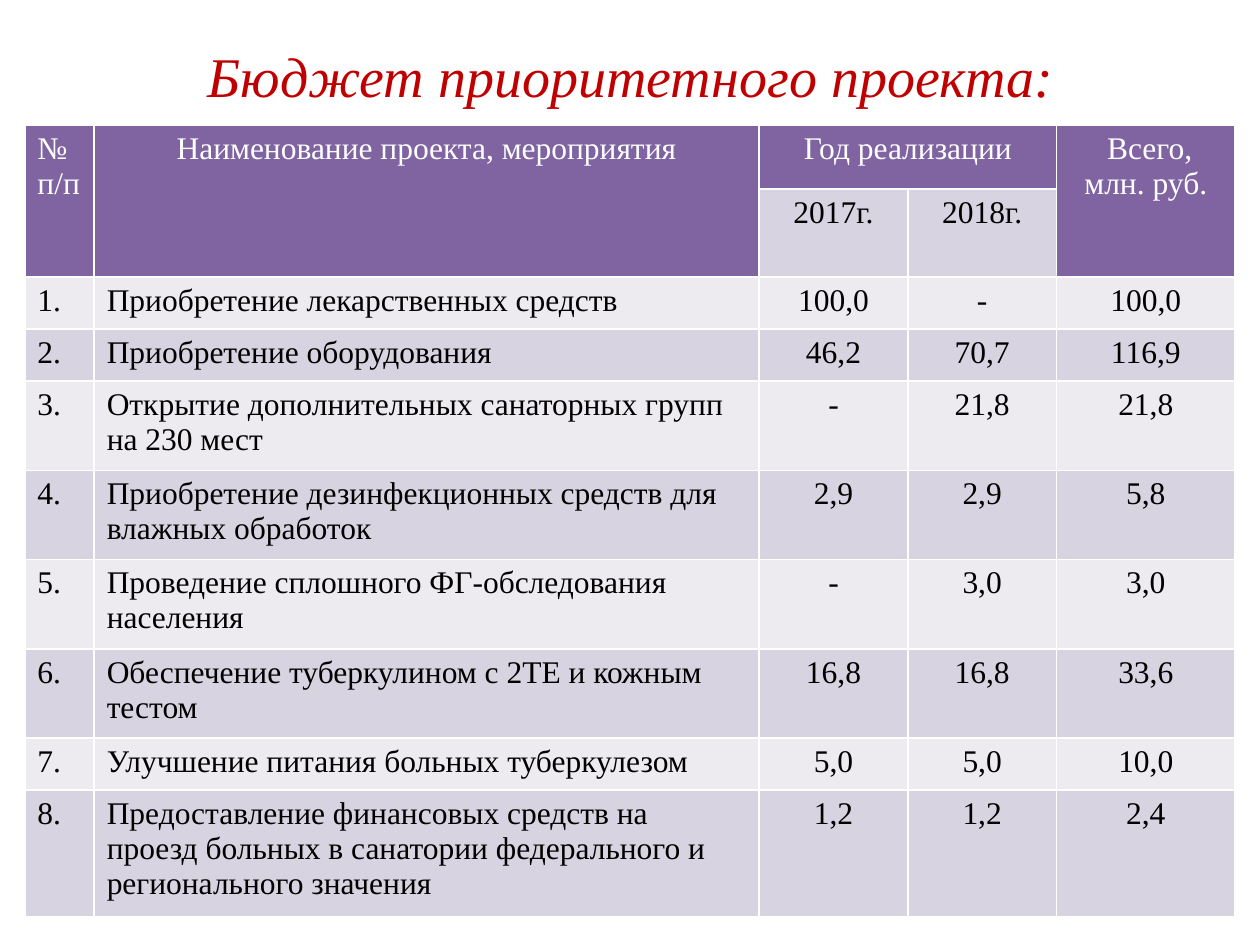
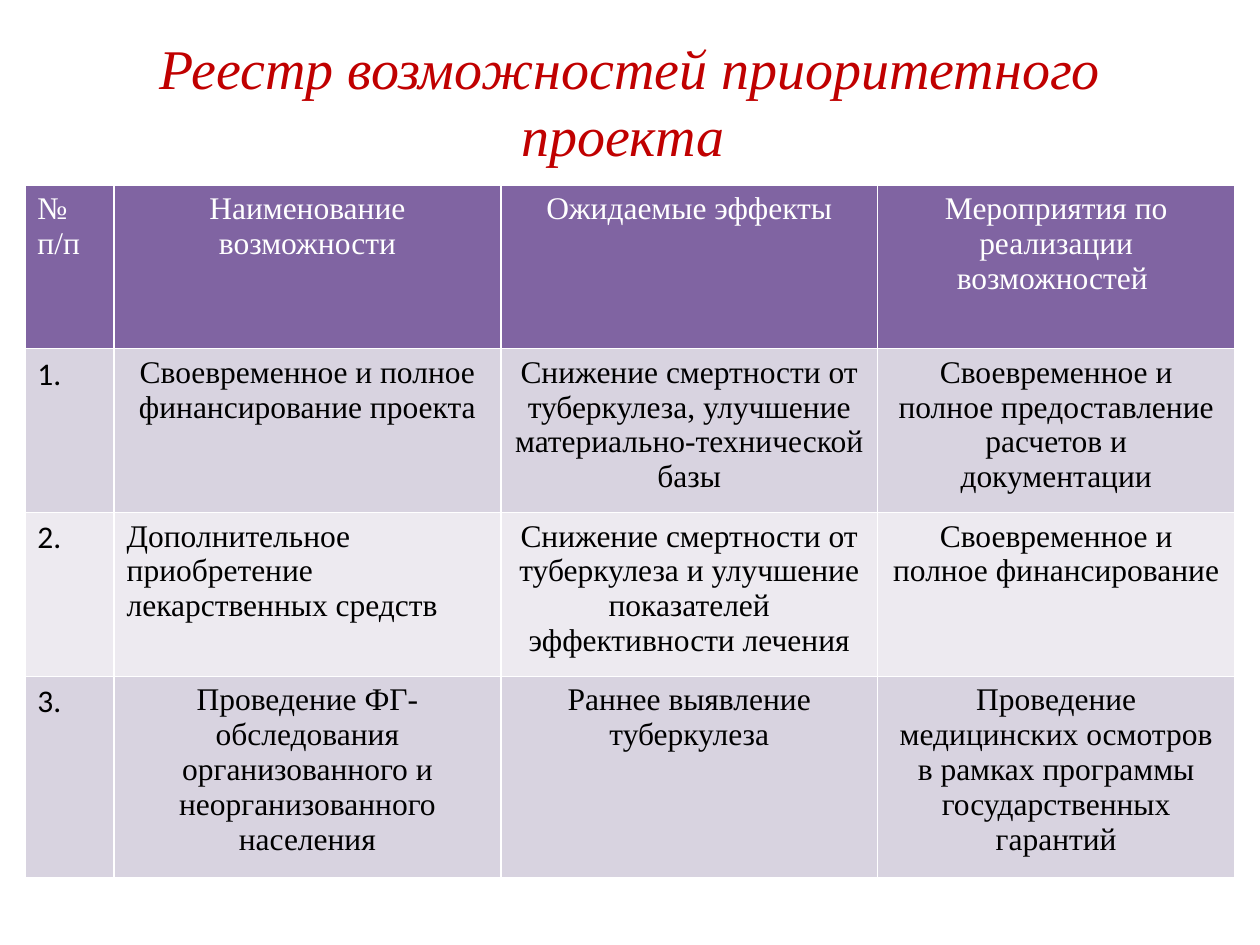
from dataclasses import dataclass

from lxml.etree import SubElement
from pptx import Presentation
from pptx.dml.color import RGBColor as Rgb
from pptx.enum.text import MSO_ANCHOR as Anchor, PP_ALIGN as Align
from pptx.oxml.ns import qn
from pptx.util import Pt


@dataclass(frozen=True)
class Theme:
    """Colours, fonts and sizes shared by both slides."""
    title: str = "C00000"
    header: str = "8064A2"
    dark_band: str = "D8D3E0"
    light_band: str = "EDEAF0"
    white: str = "FFFFFF"
    black: str = "000000"
    serif: str = "Times New Roman"
    sans: str = "Calibri"
    title_size: int = 32
    body_size: int = 18
    border: int = 1


THEME = Theme()

BUDGET = [
    ["№\nп/п", "Наименование проекта, мероприятия", "Год реализации", "", " Всего, млн. руб."],
    ["", "", "2017г.", "2018г.", ""],
    ["1.", "Приобретение лекарственных средств", "100,0", "-", "100,0"],
    ["2.", "Приобретение оборудования", "46,2", "70,7", "116,9"],
    ["3.", "Открытие дополнительных санаторных групп на 230 мест", "-", "21,8", "21,8"],
    ["4.", "Приобретение дезинфекционных средств для влажных обработок", "2,9", "2,9", "5,8"],
    ["5.", "Проведение сплошного ФГ-обследования населения", "-", "3,0", "3,0"],
    ["6.", "Обеспечение туберкулином с 2ТЕ и кожным тестом", "16,8", "16,8", "33,6"],
    ["7.", "Улучшение питания больных туберкулезом", "5,0", "5,0", "10,0"],
    ["8.", "Предоставление финансовых средств на проезд больных в санатории "
           "федерального и регионального значения", "1,2", "1,2", "2,4"],
]

OPPORTUNITIES = [
    ["№\nп/п", "Наименование возможности", "Ожидаемые эффекты",
     "Мероприятия по реализации возможностей "],
    ["1.", "Своевременное и полное финансирование проекта",
     "Снижение смертности от туберкулеза, улучшение материально-технической базы",
     "Своевременное и полное предоставление расчетов и документации"],
    ["2.", "Дополнительное приобретение лекарственных средств",
     "Снижение смертности от туберкулеза и улучшение показателей эффективности лечения",
     "Своевременное и полное финансирование"],
    ["3.", "Проведение ФГ-обследования организованного и неорганизованного населения",
     "Раннее выявление туберкулеза",
     "Проведение медицинских осмотров в рамках программы государственных гарантий"],
]


def style_paragraph(paragraph, size, color, font=THEME.serif, align=Align.CENTER):
    """Set the font and alignment of one paragraph."""
    paragraph.alignment = align
    paragraph.font.size = Pt(size)
    paragraph.font.name = font
    paragraph.font.color.rgb = Rgb.from_string(color)


def add_title(slide, box, wording):
    """Write the red italic heading in the given box."""
    heading = slide.shapes.add_textbox(*map(Pt, box)).text_frame
    heading.word_wrap = True
    heading.vertical_anchor = Anchor.MIDDLE
    heading.text = wording
    line = heading.paragraphs[0]
    style_paragraph(line, THEME.title_size, THEME.title)
    line.font.italic = True


def add_borders(cell):
    """Draw white lines on all four sides, ahead of the cell's fill."""
    properties = cell._tc.get_or_add_tcPr()
    for position, side in enumerate(("lnL", "lnR", "lnT", "lnB")):
        line = SubElement(properties, qn(f"a:{side}"), w=str(Pt(THEME.border)))
        SubElement(SubElement(line, qn("a:solidFill")), qn("a:srgbClr"), val=THEME.white)
        properties.insert(position, line)


def style_cell(cell, wording, fill, color, font, align):
    """Fill one cell, outline it and write its wording."""
    cell.fill.solid()
    cell.fill.fore_color.rgb = Rgb.from_string(fill)
    add_borders(cell)
    cell.text = wording
    for paragraph in cell.text_frame.paragraphs:
        style_paragraph(paragraph, THEME.body_size, color, font, align)


def add_register(slide, corner, widths, heights, rows, merges=(), left_cells=(),
                 number_font=THEME.serif):
    """Build a banded table with a purple header from its top left corner."""
    size = sum(widths), sum(heights)
    table = slide.shapes.add_table(len(rows), len(widths), *map(Pt, (*corner, *size))).table
    for column, width in zip(table.columns, widths):
        column.width = Pt(width)
    for row, height in zip(table.rows, heights):
        row.height = Pt(height)
    for first, last in merges:
        table.cell(*first).merge(table.cell(*last))
    for r, row in enumerate(rows):
        band = THEME.dark_band if r % 2 else THEME.light_band
        for c, wording in enumerate(row):
            fill, color = (band, THEME.black) if r else (THEME.header, THEME.white)
            font = number_font if r and c == 0 else THEME.serif
            align = Align.LEFT if c == 0 or (r, c) in left_cells else Align.CENTER
            style_cell(table.cell(r, c), wording, fill, color, font, align)


def build_budget(slide):
    """Lay out the project budget by year."""
    add_title(slide, (36.5, 15, 648, 56), "Бюджет приоритетного проекта:")
    header, one_line, two_lines, three_lines = 36.5, 29.7, 51, 72.7
    add_register(
        slide, (14.2, 71.5), (39.6, 380, 85, 85, 102),
        (header, header, one_line, one_line, *[two_lines] * 4, one_line, three_lines), BUDGET,
        merges=[((0, 0), (1, 0)), ((0, 1), (1, 1)), ((0, 2), (0, 3)), ((0, 4), (1, 4))],
        left_cells=[(r, 1) for r in range(2, len(BUDGET))])


def build_opportunities(slide):
    """Lay out the register of opportunities."""
    add_title(slide, (36, 15, 648, 85), "Реестр возможностей приоритетного проекта ")
    add_register(
        slide, (14.2, 105.8), (51, 221, 215.4, 204), [93.5] * len(OPPORTUNITIES), OPPORTUNITIES,
        left_cells=[(2, 1)], number_font=THEME.sans)


def main():
    """Create the presentation and save it."""
    deck = Presentation()
    deck.slide_width, deck.slide_height = Pt(720), Pt(540)
    for build in (build_budget, build_opportunities):
        build(deck.slides.add_slide(deck.slide_layouts[6]))
    deck.save("out.pptx")


if __name__ == "__main__":
    main()
